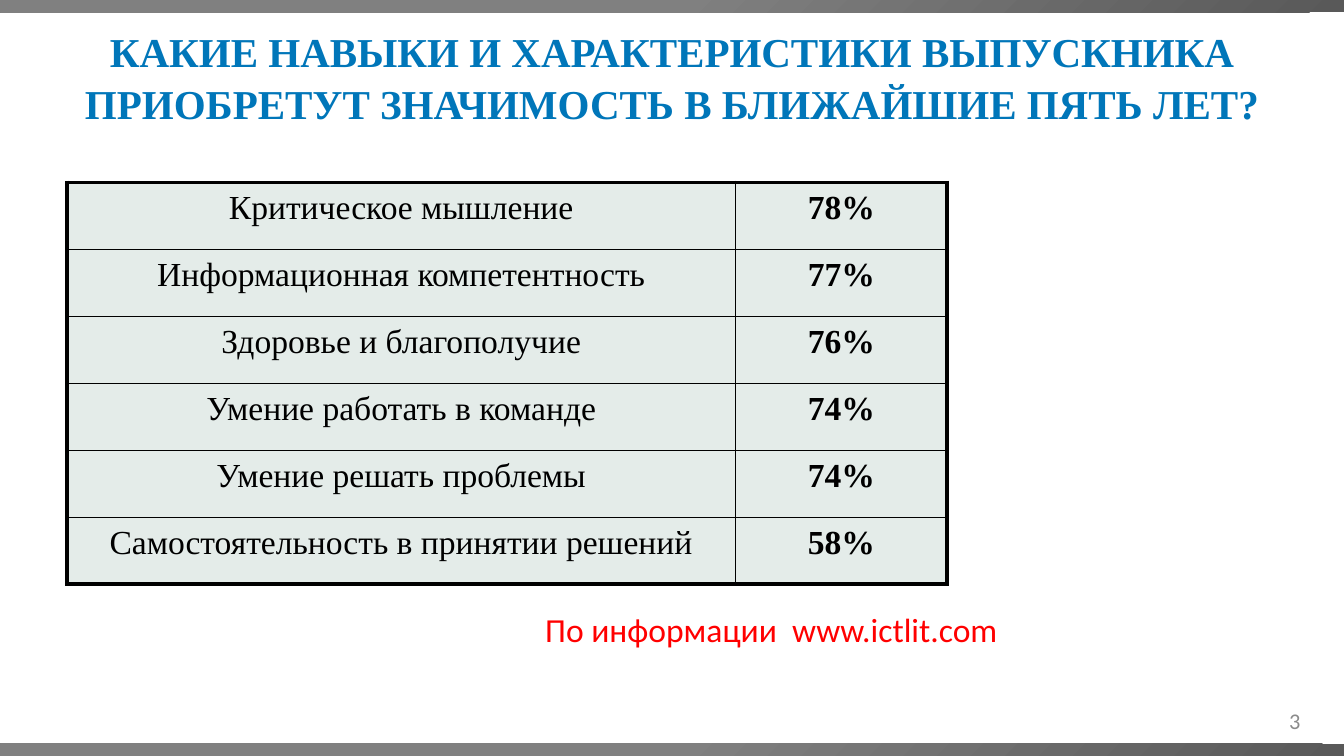
from lxml.etree import SubElement
from pptx import Presentation
from pptx.dml.color import RGBColor
from pptx.enum.shapes import MSO_SHAPE
from pptx.enum.text import MSO_ANCHOR, PP_ALIGN
from pptx.oxml.ns import qn
from pptx.util import Pt

WIDTH, HEIGHT = 720, 405
BAR_HEIGHT = 6.5
SKILLS = [
    ("Критическое мышление", "78%"),
    ("Информационная компетентность", "77%"),
    ("Здоровье и благополучие", "76%"),
    ("Умение работать в команде", "74%"),
    ("Умение решать проблемы", "74%"),
    ("Самостоятельность в принятии решений", "58%"),
]
THICK, THIN = 2.21, 0.96


def rgb(value):
    return RGBColor.from_string(value)


def write(tf, text, align, color, **font):
    p = tf.paragraphs[0]
    p.alignment = align
    r = p.add_run()
    r.text = text
    r.font.color.rgb = rgb(color)
    for name, value in font.items():
        setattr(r.font, name, value)
    return p


def add_text(s, box, text, align, color, frame, **font):
    tf = s.shapes.add_textbox(*map(Pt, box)).text_frame
    for name, value in {"word_wrap": True, **frame}.items():
        setattr(tf, name, value)
    return write(tf, text, align, color, **font)


def add_bar(s, left, top, width, height):
    sp = s.shapes.add_shape(MSO_SHAPE.RECTANGLE, *map(Pt, (left, top, width, height)))
    sp.shadow.inherit = False
    sp.line.fill.background()
    sp.fill.gradient()
    sp.fill.gradient_angle = 135
    stops = zip(sp.fill.gradient_stops, [(0, "595959"), (0.5, "808080")])
    for stop, (position, color) in stops:
        stop.position = position
        stop.color.rgb = rgb(color)


def set_borders(cell, widths):
    """Draw black borders; widths maps the sides L, R, T, B, in that order, to points."""
    tc_pr = cell._tc.get_or_add_tcPr()
    for side, width in widths.items():
        ln = SubElement(tc_pr, qn(f"a:ln{side}"), w=str(int(Pt(width))))
        fill = SubElement(ln, qn("a:solidFill"))
        SubElement(fill, qn("a:srgbClr"), val="000000")


def add_skills_table(s, left, top, width, height):
    rows, cols = len(SKILLS), 2
    box = map(Pt, (left, top, width, height))
    table = s.shapes.add_table(rows, cols, *box).table
    value_width = 113.5
    table.columns[0].width = Pt(width - value_width)
    table.columns[1].width = Pt(value_width)
    margins = {"margin_left": Pt(4.3), "margin_right": Pt(4.3),
               "margin_top": Pt(3.6), "margin_bottom": Pt(3.6)}
    for i, skill in enumerate(SKILLS):
        table.rows[i].height = Pt(height / rows)
        for j, text in enumerate(skill):
            cell = table.cell(i, j)
            outer = {"L": j == 0, "R": j == cols - 1, "T": i == 0, "B": i == rows - 1}
            set_borders(cell, {k: THICK if v else THIN for k, v in outer.items()})
            cell.fill.solid()
            cell.fill.fore_color.rgb = rgb("E4ECE9")
            for name, value in margins.items():
                setattr(cell, name, value)
            write(cell.text_frame, text, PP_ALIGN.CENTER, "000000",
                  name="Times New Roman", size=Pt(18), bold=j == 1)


def build_slide(prs):
    s = prs.slides.add_slide(prs.slide_layouts[6])
    for top in (0, HEIGHT - BAR_HEIGHT):
        add_bar(s, 0, top, WIDTH, BAR_HEIGHT)
    title = add_text(
        s, (36, 32.5, 648, 42),
        "КАКИЕ НАВЫКИ И ХАРАКТЕРИСТИКИ ВЫПУСКНИКА "
        "ПРИОБРЕТУТ ЗНАЧИМОСТЬ В БЛИЖАЙШИЕ ПЯТЬ ЛЕТ?",
        PP_ALIGN.CENTER, "0076B9",
        {"vertical_anchor": MSO_ANCHOR.BOTTOM, "margin_bottom": Pt(6)},
        name="Times New Roman", size=Pt(22), bold=True)
    title.line_spacing = 1.06
    add_skills_table(s, 36, 97.7, 471.5, 215.4)
    add_text(s, (285, 322.5, 353, 41), "По информации  www.ictlit.com",
             PP_ALIGN.LEFT, "FF0000", {}, name="Calibri", size=Pt(18))
    add_text(s, (535.7, 375.3, 168, 21.6), "3", PP_ALIGN.RIGHT, "8B8B8B",
             {"vertical_anchor": MSO_ANCHOR.MIDDLE}, name="Calibri", size=Pt(12))


def main():
    prs = Presentation()
    prs.slide_width, prs.slide_height = Pt(WIDTH), Pt(HEIGHT)
    build_slide(prs)
    prs.save("out.pptx")


if __name__ == "__main__":
    main()
